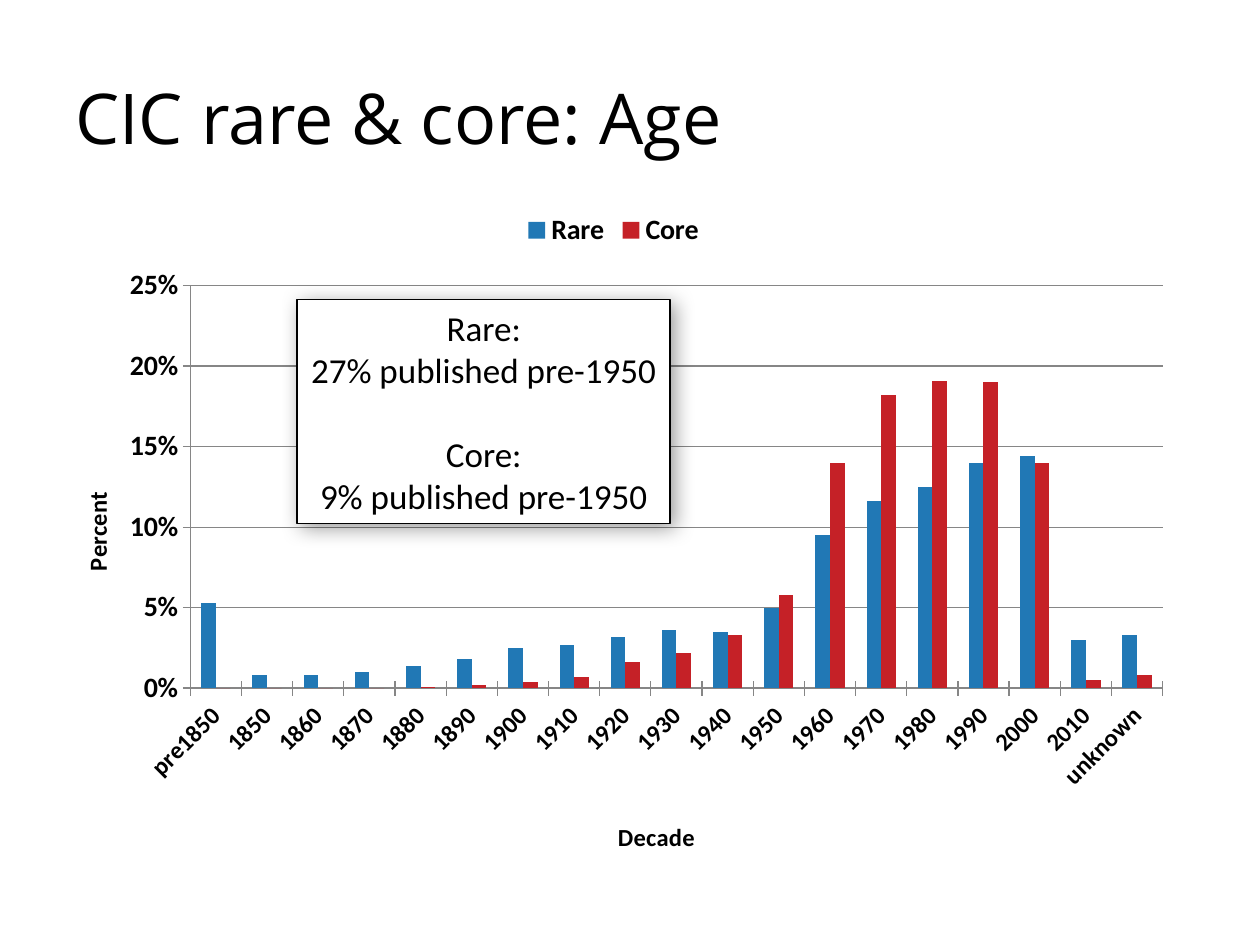
from dataclasses import dataclass

from lxml import etree
from pptx import Presentation
from pptx.chart.data import CategoryChartData
from pptx.dml.color import RGBColor
from pptx.enum.chart import XL_CHART_TYPE, XL_LEGEND_POSITION, XL_TICK_MARK
from pptx.enum.shapes import MSO_SHAPE
from pptx.enum.text import MSO_ANCHOR, PP_ALIGN
from pptx.oxml import parse_xml
from pptx.oxml.ns import qn
from pptx.util import Inches, Pt

COLUMNS = XL_CHART_TYPE.COLUMN_CLUSTERED
LEGEND_TOP = XL_LEGEND_POSITION.TOP
TICK_CROSS, TICK_NONE = XL_TICK_MARK.CROSS, XL_TICK_MARK.NONE
RECTANGLE = MSO_SHAPE.RECTANGLE
MIDDLE = MSO_ANCHOR.MIDDLE
CENTER = PP_ALIGN.CENTER

DECADES = ["pre1850", *map(str, range(1850, 2020, 10)), "unknown"]
SHARES = {
    "Rare": [0.053, 0.008, 0.008, 0.01, 0.014, 0.018, 0.025, 0.027, 0.032, 0.036,
             0.035, 0.05, 0.095, 0.116, 0.125, 0.14, 0.144, 0.03, 0.033],
    "Core": [0, 0, 0, 0, 0.001, 0.002, 0.004, 0.007, 0.016, 0.022,
             0.033, 0.058, 0.14, 0.182, 0.191, 0.19, 0.14, 0.005, 0.008],
}
FINDINGS = [("Rare:", "27% published pre-1950"), ("Core:", "9% published pre-1950")]
SHADOW = (
    '<a:effectLst xmlns:a="http://schemas.openxmlformats.org/drawingml/2006/main">'
    '<a:outerShdw blurRad="152400" dist="38100" dir="2700000" algn="tl" rotWithShape="0">'
    '<a:srgbClr val="000000"><a:alpha val="40000"/></a:srgbClr></a:outerShdw></a:effectLst>'
)


@dataclass(frozen=True)
class Theme:
    heading: str = "Open Sans"
    body: str = "Calibri"
    ink: str = "000000"
    paper: str = "FFFFFF"
    grid: str = "868686"
    series: tuple = ("2178B5", "C52127")
    title_size: int = 40
    note_size: int = 20
    scale_size: int = 16
    label_size: int = 14
    line_height: float = 1.22


class SlideBuilder:
    def __init__(self, deck, theme):
        self.deck = deck
        self.theme = theme
        self.slide = deck.slides.add_slide(deck.slide_layouts[6])

    def area(self, left, top, width, height):
        across, down = self.deck.slide_width, self.deck.slide_height
        return [round(share * side) for share, side in
                zip((left, top, width, height), (across, down, across, down))]

    def style(self, font, size, name=None, bold=False):
        font.name = name or self.theme.body
        font.size = Pt(size)
        font.bold = bold
        font.color.rgb = RGBColor.from_string(self.theme.ink)

    def title(self, text, *shares):
        frame = self.slide.shapes.add_textbox(*self.area(*shares)).text_frame
        frame.word_wrap = True
        frame.vertical_anchor = MIDDLE
        frame.text = text
        self.style(frame.paragraphs[0].runs[0].font, self.theme.title_size, self.theme.heading)

    def note(self, groups, *shares):
        theme = self.theme
        box = self.slide.shapes.add_shape(RECTANGLE, *self.area(*shares))
        box.fill.solid()
        box.fill.fore_color.rgb = RGBColor.from_string(theme.paper)
        box.line.color.rgb = RGBColor.from_string(theme.ink)
        box.line.width = Pt(1)
        box._element.spPr.append(parse_xml(SHADOW))
        frame = box.text_frame
        frame.word_wrap = False
        frame.vertical_anchor = MIDDLE
        frame.text = "\n".join(line for group in groups for line in group)
        for para in frame.paragraphs:
            para.alignment = CENTER
            self.style(para.runs[0].font, theme.note_size)
        start = 0
        for group in groups[:-1]:
            start += len(group)
            frame.paragraphs[start].space_before = Pt(theme.note_size * theme.line_height)

    def place(self, parent, index, **shares):
        for old in parent.findall(qn("c:layout")):
            parent.remove(old)
        layout = etree.Element(qn("c:layout"))
        manual = etree.SubElement(layout, qn("c:manualLayout"))
        if "w" in shares:
            etree.SubElement(manual, qn("c:layoutTarget"), val="inner")
        for side in "xy":
            etree.SubElement(manual, qn(f"c:{side}Mode"), val="edge")
        for side, share in shares.items():
            etree.SubElement(manual, qn(f"c:{side}"), val=str(share))
        parent.insert(index, layout)

    def axis(self, axis, caption, size, label_turn, caption_turn, x, y):
        axis.major_tick_mark = TICK_CROSS
        axis.minor_tick_mark = TICK_NONE
        axis.format.line.color.rgb = RGBColor.from_string(self.theme.grid)
        self.style(axis.tick_labels.font, size, bold=True)
        labels = axis._element.find(qn("c:txPr")).find(qn("a:bodyPr"))
        labels.set("rot", str(label_turn * 60000))
        title = axis.axis_title
        title.text_frame.text = caption
        self.style(title.text_frame.paragraphs[0].runs[0].font, self.theme.label_size, bold=True)
        body = title.text_frame._txBody.find(qn("a:bodyPr"))
        body.set("rot", str(caption_turn * 60000))
        body.set("vert", "horz")
        self.place(title._element, 1, x=x, y=y)

    def column_chart(self, categories, series, *shares):
        theme = self.theme
        data = CategoryChartData(number_format="0%")
        data.categories = categories
        for name, values in series.items():
            data.add_series(name, values)
        chart = self.slide.shapes.add_chart(COLUMNS, *self.area(*shares), data).chart
        self.style(chart.font, 10)
        chart.has_title = False
        chart.has_legend = True
        chart.legend.position = LEGEND_TOP
        chart.legend.include_in_layout = False
        self.style(chart.legend.font, theme.scale_size, bold=True)
        plot = chart.plots[0]
        plot.vary_by_categories = False
        plot.gap_width = 150
        plot.overlap = 0
        for bars, color in zip(plot.series, theme.series):
            bars.format.fill.solid()
            bars.format.fill.fore_color.rgb = RGBColor.from_string(color)
        self.axis(chart.category_axis, "Decade", theme.label_size, -45, 0, 0.5, 0.92)
        scale = chart.value_axis
        self.axis(scale, "Percent", theme.scale_size, 0, -90, 0.03, 0.43)
        scale.minimum_scale, scale.maximum_scale, scale.major_unit = 0, 0.25, 0.05
        scale.tick_labels.number_format = "0%"
        scale.tick_labels.number_format_is_linked = False
        scale.major_gridlines.format.line.color.rgb = RGBColor.from_string(theme.grid)
        area = chart._chartSpace.chart.plotArea
        self.place(area, 0, x=0.13, y=0.13, w=0.85, h=0.6)


def main():
    deck = Presentation()
    deck.slide_width, deck.slide_height = Inches(10), Inches(7.5)
    page = SlideBuilder(deck, Theme())
    page.column_chart(DECADES, SHARES, 0.033, 0.21, 0.908, 0.71)
    page.title("CIC rare & core: Age", 0.05, 0.04, 0.9, 0.167)
    page.note(FINDINGS, 0.236, 0.317, 0.296, 0.237)
    deck.save("out.pptx")


if __name__ == "__main__":
    main()
